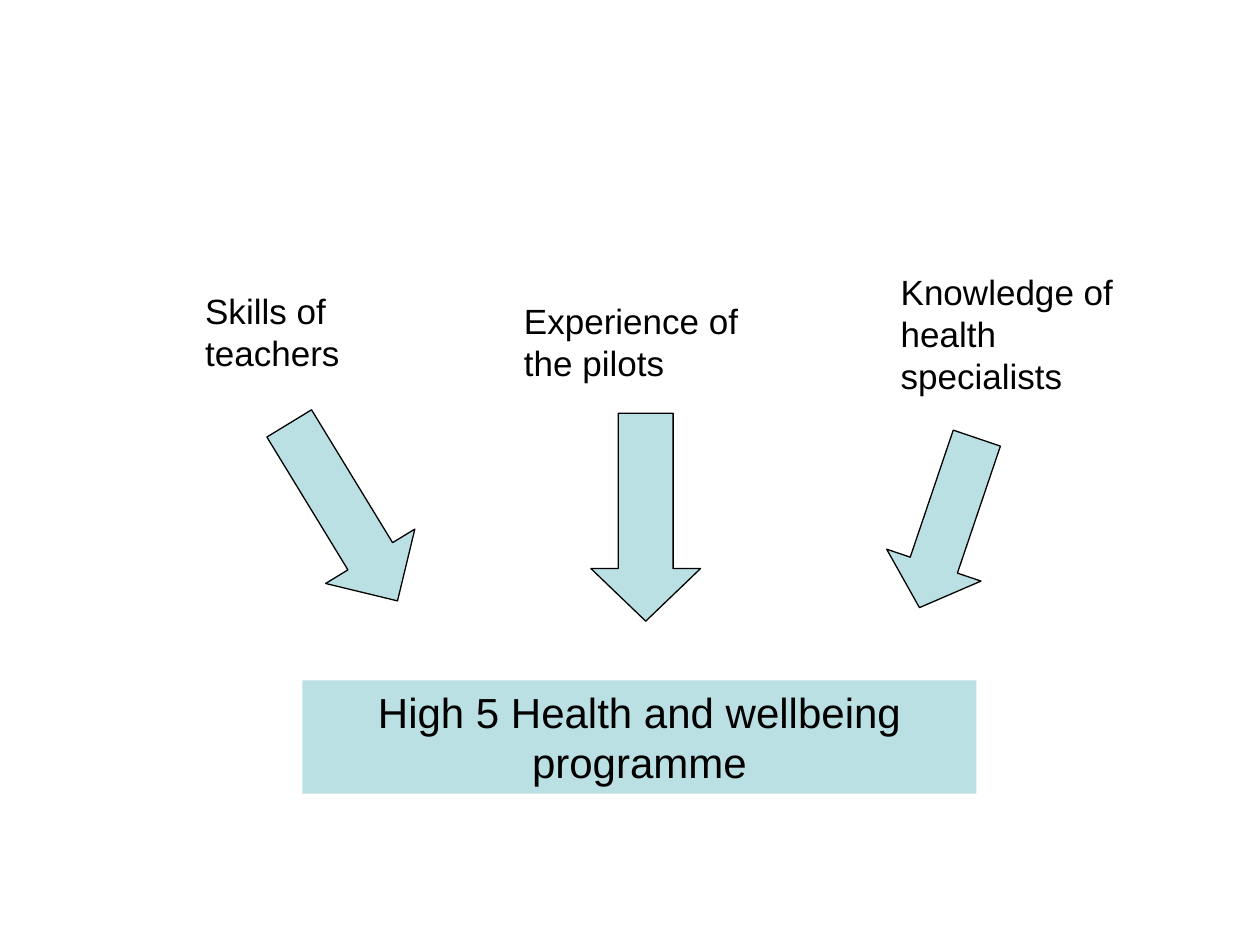
from dataclasses import dataclass

from pptx import Presentation
from pptx.dml.color import RGBColor
from pptx.enum.shapes import MSO_SHAPE
from pptx.enum.text import MSO_ANCHOR, PP_ALIGN
from pptx.util import Inches, Pt

RIGHT_ARROW = MSO_SHAPE.RIGHT_ARROW
DOWN_ARROW = MSO_SHAPE.DOWN_ARROW
RECTANGLE = MSO_SHAPE.RECTANGLE
TOP = MSO_ANCHOR.TOP
LEFT = PP_ALIGN.LEFT
CENTER = PP_ALIGN.CENTER

FONT = "Arial"
COLORS = {"text": "000000", "outline": "000000", "fill": "BBE0E3"}
BLANK_LAYOUT = 6


@dataclass
class Box:
    left: float
    top: float
    width: float
    height: float

    def lengths(self):
        return [Inches(v) for v in (self.left, self.top, self.width, self.height)]


@dataclass
class Contribution:
    text: str
    label: Box
    arrow: Box
    arrow_kind: MSO_SHAPE
    head: float
    rotation: float = 0


CONTRIBUTIONS = [
    Contribution("Skills of teachers", Box(1.53, 2.25, 1.5, 0.77),
                 Box(1.9, 3.65, 1.65, 0.83), RIGHT_ARROW, 0.5, 58.6),
    Contribution("Experience of the pilots", Box(4.06, 2.33, 2.12, 0.77),
                 Box(4.69, 3.28, 0.87, 1.65), DOWN_ARROW, 0.48),
    Contribution("Knowledge of health specialists", Box(7.05, 2.1, 2.2, 1.1),
                 Box(7.13, 3.44, 0.79, 1.42), DOWN_ARROW, 0.45, 18.7),
]
PROGRAMME = "High 5 Health and wellbeing programme"
PROGRAMME_BOX = Box(2.4, 5.4, 5.35, 0.9)


def color(name: str) -> RGBColor:
    return RGBColor.from_string(COLORS[name])


def write_text(shape, text: str, size: int, alignment: PP_ALIGN) -> None:
    frame = shape.text_frame
    frame.word_wrap = True
    frame.vertical_anchor = TOP
    paragraph = frame.paragraphs[0]
    paragraph.text = text
    paragraph.alignment = alignment
    paragraph.font.name = FONT
    paragraph.font.size = Pt(size)
    paragraph.font.color.rgb = color("text")


def add_filled_shape(slide, kind: MSO_SHAPE, box: Box):
    shape = slide.shapes.add_shape(kind, *box.lengths())
    shape.shadow.inherit = False
    shape.fill.solid()
    shape.fill.fore_color.rgb = color("fill")
    return shape


def add_label(slide, item: Contribution) -> None:
    label = slide.shapes.add_textbox(*item.label.lengths())
    write_text(label, item.text, 20, LEFT)


def add_arrow(slide, item: Contribution) -> None:
    arrow = add_filled_shape(slide, item.arrow_kind, item.arrow)
    arrow.line.color.rgb = color("outline")
    arrow.line.width = Pt(0.75)
    arrow.adjustments[0] = 0.5
    arrow.adjustments[1] = item.head
    arrow.rotation = item.rotation


def add_programme(slide) -> None:
    programme = add_filled_shape(slide, RECTANGLE, PROGRAMME_BOX)
    programme.line.fill.background()
    write_text(programme, PROGRAMME, 24, CENTER)


def main() -> None:
    presentation = Presentation()
    presentation.slide_width = Inches(10)
    presentation.slide_height = Inches(7.5)
    slide = presentation.slides.add_slide(presentation.slide_layouts[BLANK_LAYOUT])
    for item in CONTRIBUTIONS:
        add_label(slide, item)
    for item in CONTRIBUTIONS:
        add_arrow(slide, item)
    add_programme(slide)
    presentation.save("out.pptx")


if __name__ == "__main__":
    main()
